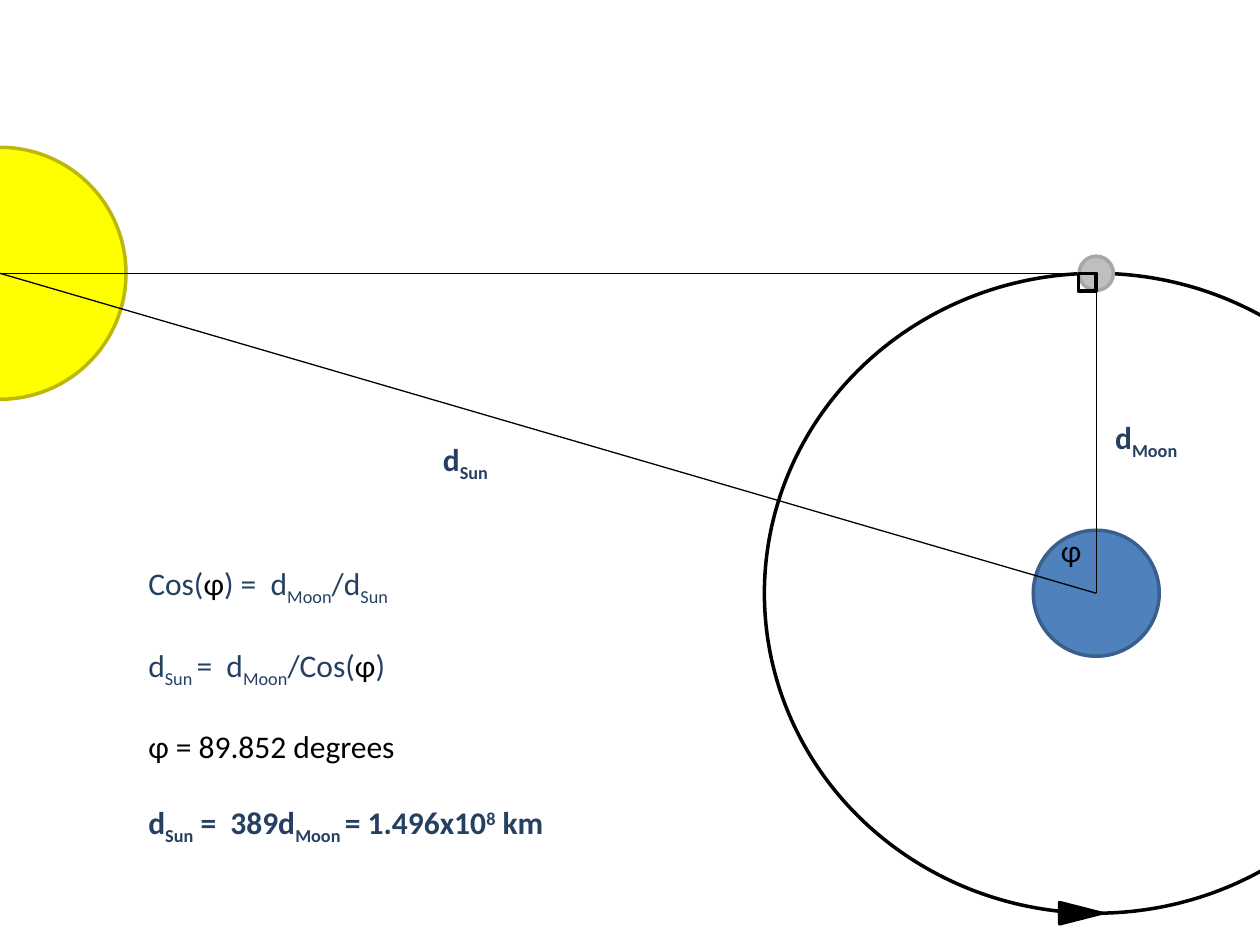
from lxml import etree
from pptx import Presentation
from pptx import util as u
from pptx.dml.color import RGBColor
from pptx.enum import shapes, text
from pptx.oxml import ns

BLACK = RGBColor(0x00, 0x00, 0x00)
NAVY = RGBColor(0x25, 0x40, 0x61)
BLUE = RGBColor(0x4F, 0x81, 0xBD)
BLUE_EDGE = RGBColor(0x3A, 0x5F, 0x8C)
GREY = RGBColor(0xBF, 0xBF, 0xBF)
GREY_EDGE = RGBColor(0xA6, 0xA6, 0xA6)
YELLOW = RGBColor(0xFF, 0xFF, 0x00)
YELLOW_EDGE = RGBColor(0xBB, 0xB7, 0x0B)

SUB, SUPER = -25, 30
SHAPE = shapes.MSO_SHAPE

# Centres of the three bodies, in cm
SUN = (0, 5.51)
MOON = (22.1, 5.51)
EARTH = (22.1, 11.96)
ORBIT_RX, ORBIT_RY = 6.69, 6.45


def add_shape(s, kind, centre, w, h, fill=None, edge=BLACK, rotation=0):
    """Add a preset shape around its centre."""
    x, y = centre
    sp = s.shapes.add_shape(kind, u.Cm(x - w / 2), u.Cm(y - h / 2), u.Cm(w), u.Cm(h))
    sp.shadow.inherit = False
    sp.rotation = rotation
    if fill is None:
        sp.fill.background()
    else:
        sp.fill.solid()
        sp.fill.fore_color.rgb = fill
    sp.line.color.rgb = edge
    sp.line.width = u.Pt(2)


def add_line(s, start, end):
    """Add a thin black line between two points."""
    cx = s.shapes.add_connector(
        shapes.MSO_CONNECTOR.STRAIGHT, *(u.Cm(v) for v in (*start, *end)))
    cx.line.color.rgb = BLACK
    cx.line.width = u.Pt(0.75)
    etree.SubElement(cx._element.spPr, ns.qn("a:effectLst"))


def add_run(p, content, color=NAVY, bold=False, baseline=0):
    r = p.add_run()
    r.text = content
    r.font.name = "Calibri"
    r.font.size = u.Pt(18)
    r.font.bold = bold
    r.font.color.rgb = color
    if baseline:
        r._r.get_or_add_rPr().set("baseline", str(baseline * 1000))


def add_text(s, box, paragraphs, bold=False, align=text.PP_ALIGN.LEFT, gap=0, wrap=True):
    """Add a text box; each paragraph is a list of (text, run format) pairs."""
    tf = s.shapes.add_textbox(*(u.Cm(v) for v in box)).text_frame
    tf.word_wrap = wrap
    for i, runs in enumerate(paragraphs):
        p = tf.paragraphs[0] if i == 0 else tf.add_paragraph()
        p.alignment = align
        p.space_after = u.Pt(gap)
        for content, fmt in runs:
            add_run(p, content, **{"bold": bold, **fmt})


def distance(body, **fmt):
    """Runs for a distance symbol with the body's name as subscript."""
    return [("d", fmt), (body, {**fmt, "baseline": SUB})]


def main():
    prs = Presentation()
    prs.slide_width, prs.slide_height = u.Cm(25.4), u.Cm(19.05)
    s = prs.slides.add_slide(prs.slide_layouts[6])

    # Orbit and bodies
    add_shape(s, SHAPE.OVAL, EARTH, 2 * ORBIT_RX, 2 * ORBIT_RY)
    add_shape(s, SHAPE.OVAL, EARTH, 2.54, 2.54, BLUE, BLUE_EDGE)
    add_shape(s, SHAPE.OVAL, MOON, 0.69, 0.69, GREY, GREY_EDGE)
    add_shape(s, SHAPE.OVAL, SUN, 5.08, 5.08, YELLOW, YELLOW_EDGE)

    # Direction of travel at the foot of the orbit
    add_shape(s, SHAPE.ISOSCELES_TRIANGLE, (21.78, EARTH[1] + ORBIT_RY),
              0.43, 0.84, BLACK, rotation=90)

    # Right triangle and its right-angle mark
    for start, end in ((MOON, EARTH), (EARTH, SUN), (SUN, MOON)):
        add_line(s, start, end)
    mark = 0.36
    add_shape(s, SHAPE.RECTANGLE, (MOON[0] - mark / 2, MOON[1] + mark / 2), mark, mark)

    # Labels
    phi = ("ɸ", {"color": BLACK})
    add_text(s, (20.96, 10.59, 1.27, 1.07), [[phi]], align=text.PP_ALIGN.CENTER)
    add_text(s, (8.68, 8.74, 1.52, 1.02), [distance("Sun")], bold=True, wrap=False)
    add_text(s, (22.23, 8.31, 1.93, 1.02), [distance("Moon")], bold=True, wrap=False)

    # Derivation
    strong = {"bold": True}
    add_text(s, (2.74, 11.25, 9.09, 6.15), [
        [("Cos(", {}), phi, (") =  ", {}), *distance("Moon"), ("/", {}), *distance("Sun")],
        [*distance("Sun "), ("=  ", {}), *distance("Moon"), ("/Cos(", {}), phi, (")", {})],
        [("ɸ = 89.852 degrees", {"color": BLACK})],
        [*distance("Sun", **strong), (" =  389", strong), *distance("Moon ", **strong),
         ("= 1.496x10", strong), ("8", {"bold": True, "baseline": SUPER}), (" km", strong)],
    ], gap=22)

    prs.save("out.pptx")


if __name__ == "__main__":
    main()
